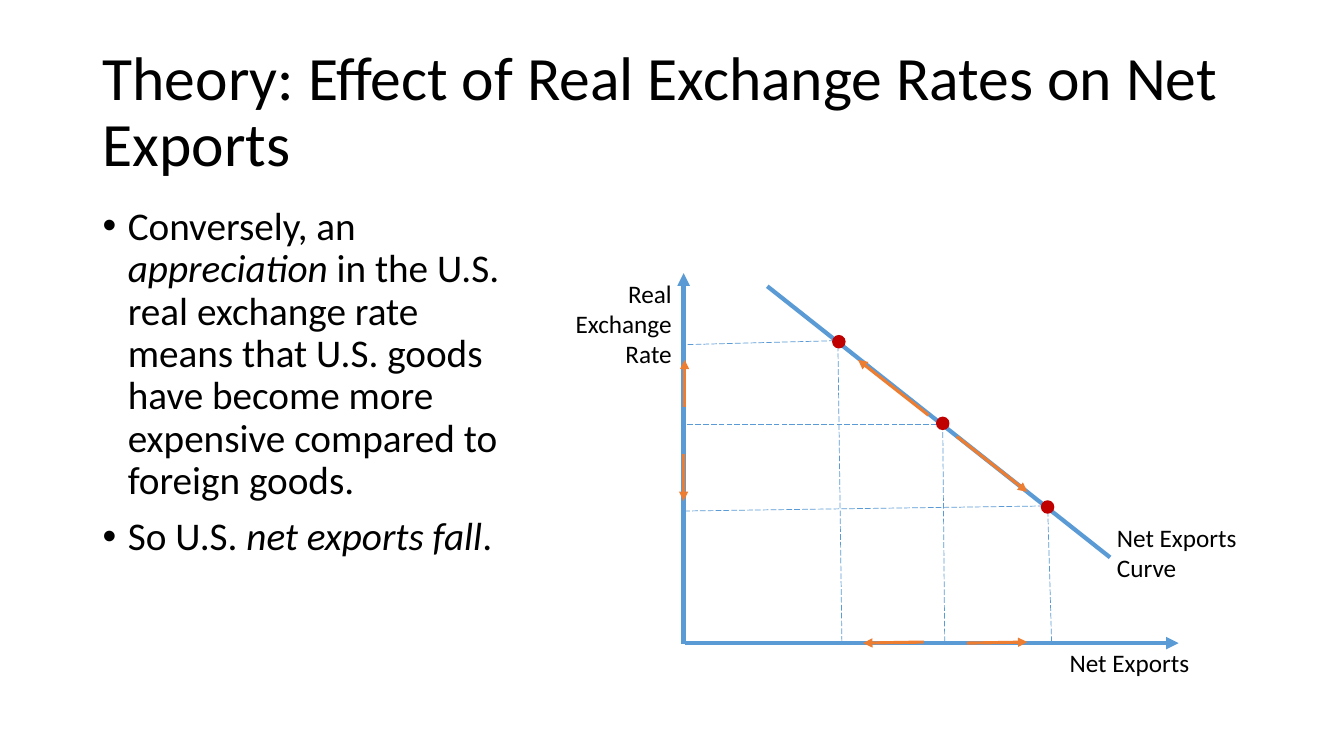
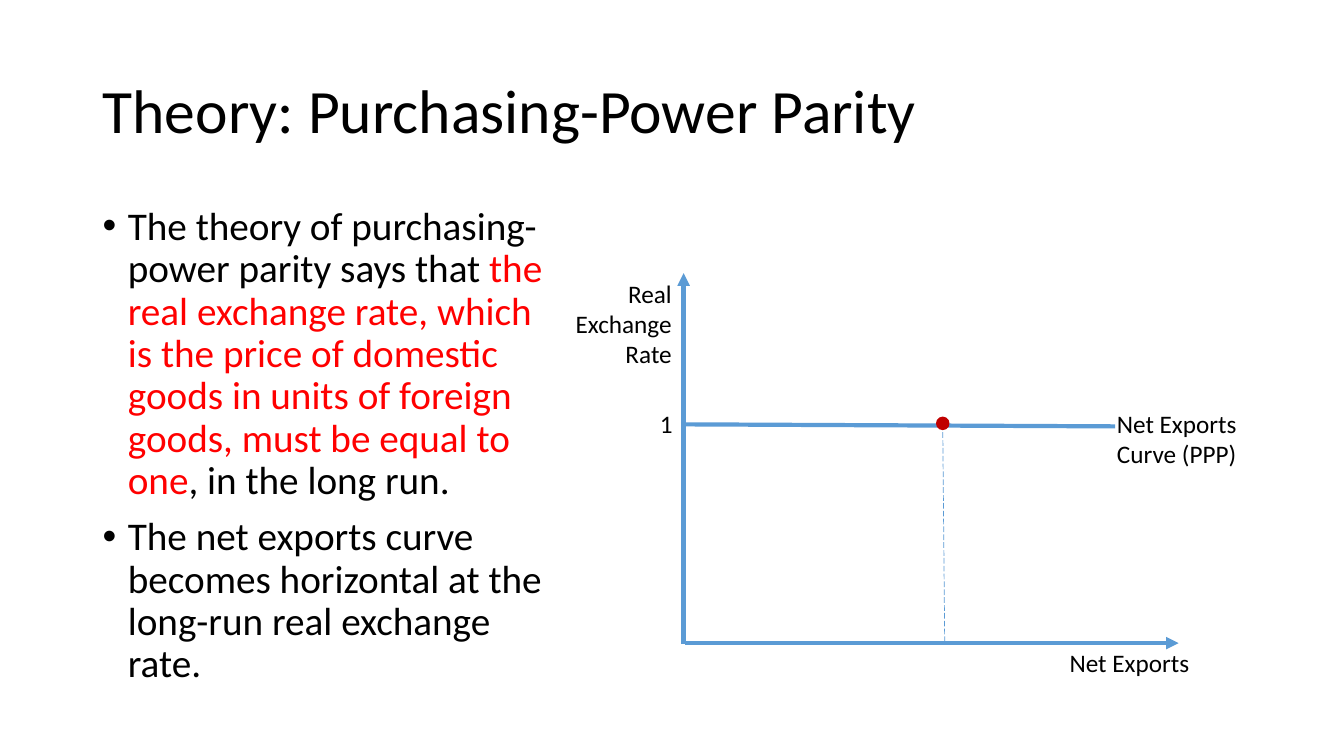
from lxml import etree
from pptx import Presentation
from pptx.dml.color import RGBColor
from pptx.enum.dml import MSO_LINE
from pptx.enum.shapes import MSO_CONNECTOR, MSO_SHAPE
from pptx.enum.text import MSO_ANCHOR, PP_ALIGN
from pptx.oxml.ns import qn
from pptx.util import Inches, Pt

FONT = "Calibri"
BLACK, RED = "000000", "FF0000"
BLUE, ORANGE, DOT_RED = "5B9BD5", "ED7D31", "C00000"
DOT_SIZE = 0.12

# Shared chart frame: lines run from start to end, labels are (text, box, alignment)
AXES = [((6.79, 6.38), (11.69, 6.38)), ((6.78, 6.39), (6.78, 2.71))]
AXIS_LABELS = [
    ("Net Exports", (10.51, 6.37, 1.59, 0.4), PP_ALIGN.LEFT),
    ("Real Exchange Rate", (5.47, 2.71, 1.29, 1.01), PP_ALIGN.RIGHT),
]
MIDDLE_GUIDES = [((9.29, 4.21), (6.79, 4.21)), ((9.35, 4.21), (9.37, 6.37))]
MIDDLE_DOT = (9.35, 4.2)

# Bullets are lists of (text, style) runs
SLIDES = [
    {
        "title": "Theory: Effect of Real Exchange Rates on Net Exports",
        "body_width": 4.37,
        "bullets": [
            [("Conversely, an ", ""), ("appreciation", "italic"),
             (" in the U.S. real exchange rate means that U.S. goods have become "
              "more expensive compared to foreign goods.", "")],
            [("So U.S. ", ""), ("net exports fall", "italic"), (".", "")],
        ],
        "curve": ((7.61, 2.84), (11.01, 5.53)),
        "labels": [("Net Exports Curve", (10.98, 5.13, 1.64, 0.71), PP_ALIGN.LEFT)],
        "guides": [
            ((8.28, 3.38), (6.78, 3.42)), ((8.31, 3.35), (8.35, 6.37)),
            ((10.35, 5.02), (6.78, 5.07)), ((10.39, 4.99), (10.43, 6.37)),
        ],
        "arrows": [
            ((9.21, 4.12), (8.51, 3.57)), ((9.49, 4.33), (10.19, 4.88)),
            ((6.79, 4.04), (6.79, 3.57)), ((6.78, 4.5), (6.78, 4.97)),
            ((9.59, 6.38), (10.19, 6.37)), ((9.16, 6.37), (8.56, 6.38)),
        ],
        "dots": [(8.32, 3.39), (10.39, 5.03)],
    },
    {
        "title": "Theory: Purchasing-Power Parity",
        "body_width": 4.77,
        "bullets": [
            [("The theory of purchasing-power parity says that ", ""),
             ("the real exchange rate, which is the price of domestic goods in units "
              "of foreign goods, must be equal to one", "red"),
             (", in the long run.", "")],
            [("The net exports curve becomes horizontal at the long-run real "
              "exchange rate.", "")],
        ],
        "curve": ((6.8, 4.21), (11.06, 4.23)),
        "labels": [
            ("Net Exports Curve (PPP)", (10.98, 4, 1.64, 0.71), PP_ALIGN.LEFT),
            ("1", (6.1, 4, 0.67, 0.41), PP_ALIGN.RIGHT),
        ],
        "guides": [],
        "arrows": [],
        "dots": [],
    },
]


def color(value):
    return RGBColor.from_string(value)


def add_text(slide, at, paragraphs, size, align=PP_ALIGN.LEFT,
             anchor=MSO_ANCHOR.TOP, line_spacing=None, bullet=False):
    box = slide.shapes.add_textbox(*map(Inches, at))
    frame = box.text_frame
    frame.word_wrap = True
    frame.vertical_anchor = anchor
    for index, runs in enumerate(paragraphs):
        para = frame.add_paragraph() if index else frame.paragraphs[0]
        para.alignment = align
        para.line_spacing = line_spacing
        para.font.name, para.font.size = FONT, Pt(size)
        para.font.color.rgb = color(BLACK)
        for text, style in runs:
            span = para.add_run()
            span.text = text
            if style == "italic":
                span.font.italic = True
            elif style == "red":
                span.font.color.rgb = color(RED)
        if bullet:
            para.space_before = Pt(10)
            add_bullet(para)


def add_bullet(para):
    props = para._p.get_or_add_pPr()
    props.set("marL", str(Inches(0.25)))
    props.set("indent", str(-Inches(0.25)))
    marks = [etree.Element(qn("a:buFont"), typeface="Arial"),
             etree.Element(qn("a:buChar"), char="•")]
    defaults = props.find(qn("a:defRPr"))
    for mark in marks:
        defaults.addprevious(mark)


def add_line(slide, ends, line_color, width, dashed=False, arrow=False):
    (x1, y1), (x2, y2) = ends
    line = slide.shapes.add_connector(
        MSO_CONNECTOR.STRAIGHT, Inches(x1), Inches(y1), Inches(x2), Inches(y2))
    line.line.color.rgb = color(line_color)
    line.line.width = Pt(width)
    if dashed:
        line.line.dash_style = MSO_LINE.LONG_DASH
    if arrow:
        etree.SubElement(line.line._get_or_add_ln(), qn("a:tailEnd"), type="triangle")
    etree.SubElement(line._element.spPr, qn("a:effectLst"))


def add_dot(slide, center):
    left, top = (value - DOT_SIZE / 2 for value in center)
    dot = slide.shapes.add_shape(MSO_SHAPE.OVAL, Inches(left), Inches(top),
                                 Inches(DOT_SIZE), Inches(DOT_SIZE))
    dot.shadow.inherit = False
    dot.fill.solid()
    dot.fill.fore_color.rgb = color(DOT_RED)
    dot.line.color.rgb = color(DOT_RED)
    dot.line.width = Pt(1)


def build_slide(deck, content):
    slide = deck.slides.add_slide(deck.slide_layouts[6])

    # Title and bullets
    add_text(slide, (0.92, 0.4, 11.5, 1.45), [[(content["title"], "")]], 44,
             anchor=MSO_ANCHOR.MIDDLE, line_spacing=0.9)
    add_text(slide, (0.92, 2, content["body_width"], 4.76), content["bullets"], 28,
             line_spacing=0.9, bullet=True)

    # Axes, curve and labels
    for ends in AXES:
        add_line(slide, ends, BLUE, 3, arrow=True)
    add_line(slide, content["curve"], BLUE, 3)
    for text, at, align in AXIS_LABELS + content["labels"]:
        add_text(slide, at, [[(text, "")]], 18, align)

    # Guides, points and movement arrows
    for ends in content["guides"] + MIDDLE_GUIDES:
        add_line(slide, ends, BLUE, 0.5, dashed=True)
    for center in content["dots"] + [MIDDLE_DOT]:
        add_dot(slide, center)
    for ends in content["arrows"]:
        add_line(slide, ends, ORANGE, 2.25, arrow=True)


def main():
    deck = Presentation()
    deck.slide_width, deck.slide_height = Inches(13.33), Inches(7.5)
    for content in SLIDES:
        build_slide(deck, content)
    deck.save("out.pptx")


if __name__ == "__main__":
    main()
